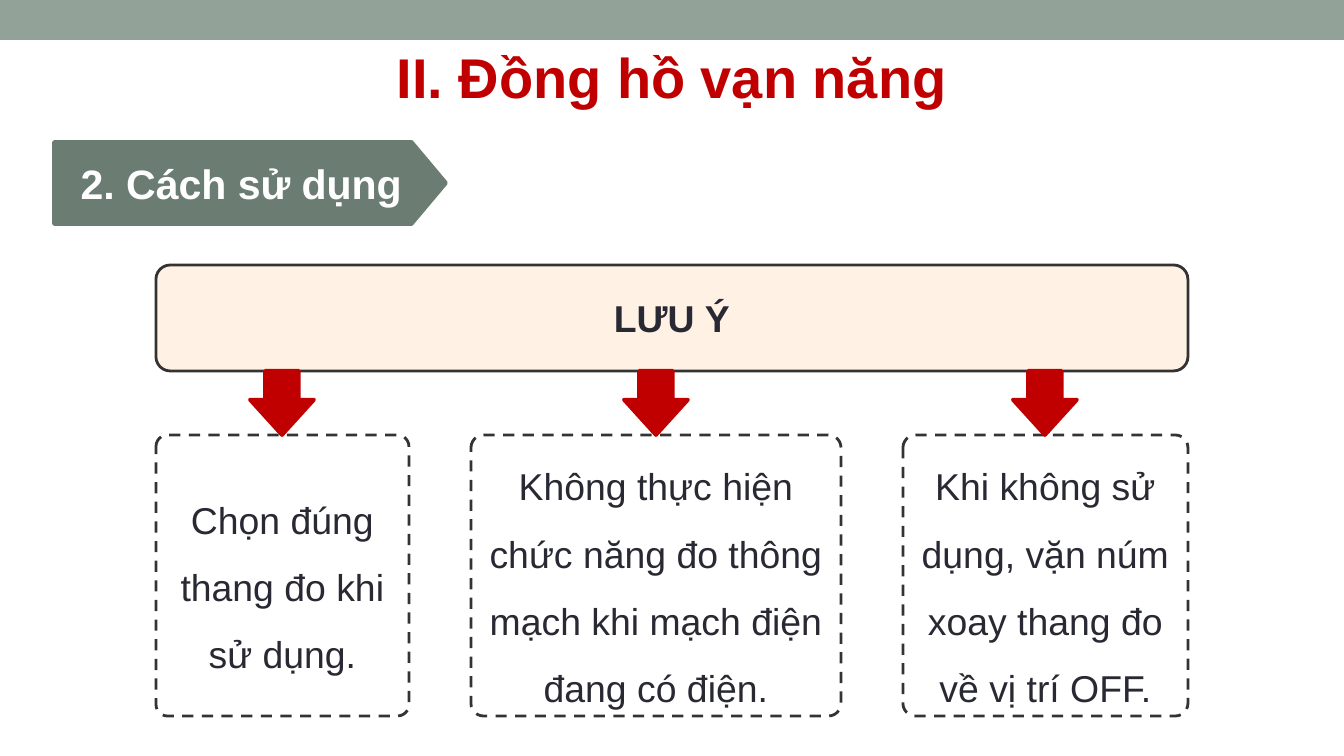
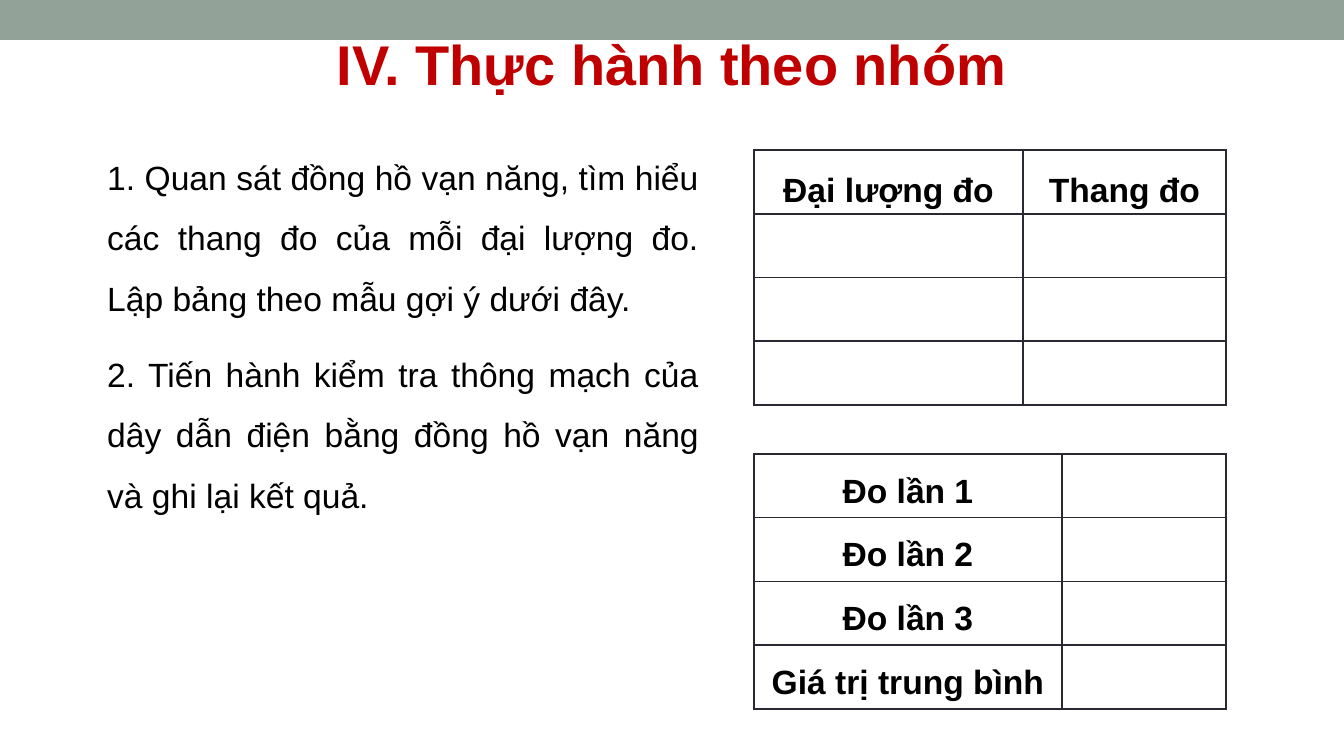
from dataclasses import dataclass

from lxml.etree import SubElement
from pptx import Presentation
from pptx.dml.color import RGBColor as RGB
from pptx.enum.dml import MSO_LINE_DASH_STYLE as Dash
from pptx.enum.shapes import MSO_SHAPE as Shape
from pptx.enum.text import MSO_ANCHOR as Anchor, MSO_AUTO_SIZE as AutoSize, PP_ALIGN as Align
from pptx.oxml.ns import qn
from pptx.util import Emu, Pt

SCALE = 914400 / 134.4  # EMU in one px
WIDTH, HEIGHT = 1344, 756


@dataclass(frozen=True)
class Theme:
    font: str = "Arial"
    band: str = "93A299"
    tag: str = "6B7D72"
    accent: str = "C00000"
    ink: str = "292934"
    outline: str = "333333"
    cream: str = "FFF2E5"
    white: str = "FFFFFF"
    black: str = "000000"
    title_size: int = 30
    tag_size: int = 22
    card_size: int = 20
    body_size: int = 18


THEME = Theme()


def px(length):
    return Emu(round(length * SCALE))


def write(frame, text, size, color, bold=False, align=Align.CENTER, spacing=None):
    paragraph = frame.paragraphs[0]
    run = paragraph.add_run()
    run.text = text
    for name, value in {"alignment": align, "line_spacing": spacing}.items():
        setattr(paragraph, name, value)
    for name, value in {"name": THEME.font, "size": Pt(size), "bold": bold}.items():
        setattr(run.font, name, value)
    run.font.color.rgb = RGB.from_string(color)


def add_figure(slide, kind, box, fill, line=None, width=1.5, dash=None, adjustments=()):
    shape = slide.shapes.add_shape(kind, *map(px, box))
    shape.shadow.inherit = False
    shape.fill.solid()
    shape.fill.fore_color.rgb = RGB.from_string(fill)
    if line:
        shape.line.color.rgb = RGB.from_string(line)
        for name, value in {"width": Pt(width), "dash_style": dash}.items():
            setattr(shape.line, name, value)
    else:
        shape.line.fill.background()
    for index, value in enumerate(adjustments):
        shape.adjustments[index] = value
    frame = shape.text_frame
    frame.word_wrap = True
    frame.vertical_anchor = Anchor.MIDDLE
    return shape


def add_text(slide, box, text, size, color, **style):
    frame = slide.shapes.add_textbox(*map(px, box)).text_frame
    for name, value in {"word_wrap": True, "auto_size": AutoSize.SHAPE_TO_FIT_TEXT}.items():
        setattr(frame, name, value)
    write(frame, text, size, color, **style)


# Shared slide frame: top band and title
def start_slide(presentation, title, title_top):
    slide = presentation.slides.add_slide(presentation.slide_layouts[6])
    add_figure(slide, Shape.RECTANGLE, (0, 0, WIDTH, 40), THEME.band)
    add_text(slide, (0, title_top, WIDTH, 82), title, THEME.title_size, THEME.accent, bold=True)
    return slide


def add_tag(slide, box, text):
    tag = add_figure(slide, Shape.PENTAGON, box, THEME.tag, THEME.tag, 2.08, adjustments=[0.42])
    write(tag.text_frame, text, THEME.tag_size, THEME.white, bold=True)


# Banner with an arrow down to each card
def add_notes_diagram(slide, box, heading, cards):
    left, top, width, height = box
    banner_height, arrow, card_gap = 106, 64, 62
    banner = add_figure(slide, Shape.ROUNDED_RECTANGLE, (left, top, width, banner_height),
                        THEME.cream, THEME.outline, adjustments=[0.135])
    write(banner.text_frame, heading, THEME.card_size, THEME.ink, bold=True)
    arrow_top = top + banner_height
    card_top = arrow_top + arrow
    for card_width, text in cards:
        card = add_figure(slide, Shape.ROUNDED_RECTANGLE,
                          (left, card_top, card_width, top + height - card_top),
                          THEME.white, THEME.outline, dash=Dash.DASH, adjustments=[0.045])
        write(card.text_frame, text, THEME.card_size, THEME.ink, spacing=1.5)
        add_figure(slide, Shape.DOWN_ARROW,
                   (left + (card_width - arrow) // 2, arrow_top, arrow, arrow),
                   THEME.accent, THEME.accent, 2.08, adjustments=[0.525, 0.55])
        left += card_width + card_gap


def add_borders(cell):
    properties = cell._tc.get_or_add_tcPr()
    for side in ("lnL", "lnR", "lnT", "lnB"):
        line = SubElement(properties, qn(f"a:{side}"), w=str(Pt(1)))
        fill = SubElement(line, qn("a:solidFill"))
        SubElement(fill, qn("a:srgbClr"), val=THEME.ink)


# Bordered table; empty strings leave cells to fill in
def add_grid(slide, box, column_widths, rows, anchor):
    table = slide.shapes.add_table(len(rows), len(column_widths), *map(px, box)).table
    table.first_row = table.horz_banding = False
    for column, width in zip(table.columns, column_widths):
        column.width = px(width)
    for row, texts in zip(table.rows, rows):
        row.height = px(box[3] / len(rows))
        for cell, text in zip(row.cells, texts):
            add_borders(cell)
            cell.fill.solid()
            cell.fill.fore_color.rgb = RGB.from_string(THEME.white)
            if text:
                layout = {"margin_left": px(9), "margin_right": px(9), "margin_top": 0,
                          "margin_bottom": 0, "vertical_anchor": anchor}
                for name, value in layout.items():
                    setattr(cell, name, value)
                write(cell.text_frame, text, THEME.body_size, THEME.black, bold=True, spacing=1.5)


def add_tasks(slide, box, tasks):
    left, top, width, height = box
    pitch = height // len(tasks)
    for index, task in enumerate(tasks):
        add_text(slide, (left, top + index * pitch, width, pitch), task,
                 THEME.body_size, THEME.black, align=Align.JUSTIFY, spacing=1.5)


def build_usage_slide(presentation):
    slide = start_slide(presentation, "II. Đồng hồ vạn năng", 36)
    add_tag(slide, (54, 142, 392, 82), "2. Cách sử dụng")
    add_notes_diagram(slide, (156, 265, 1032, 451), "LƯU Ý", [
        (253, "Chọn đúng thang đo khi sử dụng."),
        (370, "Không thực hiện chức năng đo thông mạch khi mạch điện đang có điện."),
        (285, "Khi không sử dụng, vặn núm xoay thang đo về vị trí OFF."),
    ])


def build_practice_slide(presentation):
    slide = start_slide(presentation, "IV. Thực hành theo nhóm", 23)
    add_tasks(slide, (94, 130, 618, 394), [
        "1. Quan sát đồng hồ vạn năng, tìm hiểu các thang đo của mỗi đại lượng đo. "
        "Lập bảng theo mẫu gợi ý dưới đây.",
        "2. Tiến hành kiểm tra thông mạch của dây dẫn điện bằng đồng hồ vạn năng "
        "và ghi lại kết quả.",
    ])
    add_grid(slide, (754, 150, 472, 255), (269, 203),
             [("Đại lượng đo", "Thang đo")] + [("", "")] * 3, Anchor.MIDDLE)
    readings = [f"Đo lần {number}" for number in range(1, 4)] + ["Giá trị trung bình"]
    add_grid(slide, (754, 454, 472, 255), (308, 164),
             [(reading, "") for reading in readings], Anchor.TOP)


def main():
    presentation = Presentation()
    presentation.slide_width, presentation.slide_height = px(WIDTH), px(HEIGHT)
    build_usage_slide(presentation)
    build_practice_slide(presentation)
    presentation.save("out.pptx")


if __name__ == "__main__":
    main()
